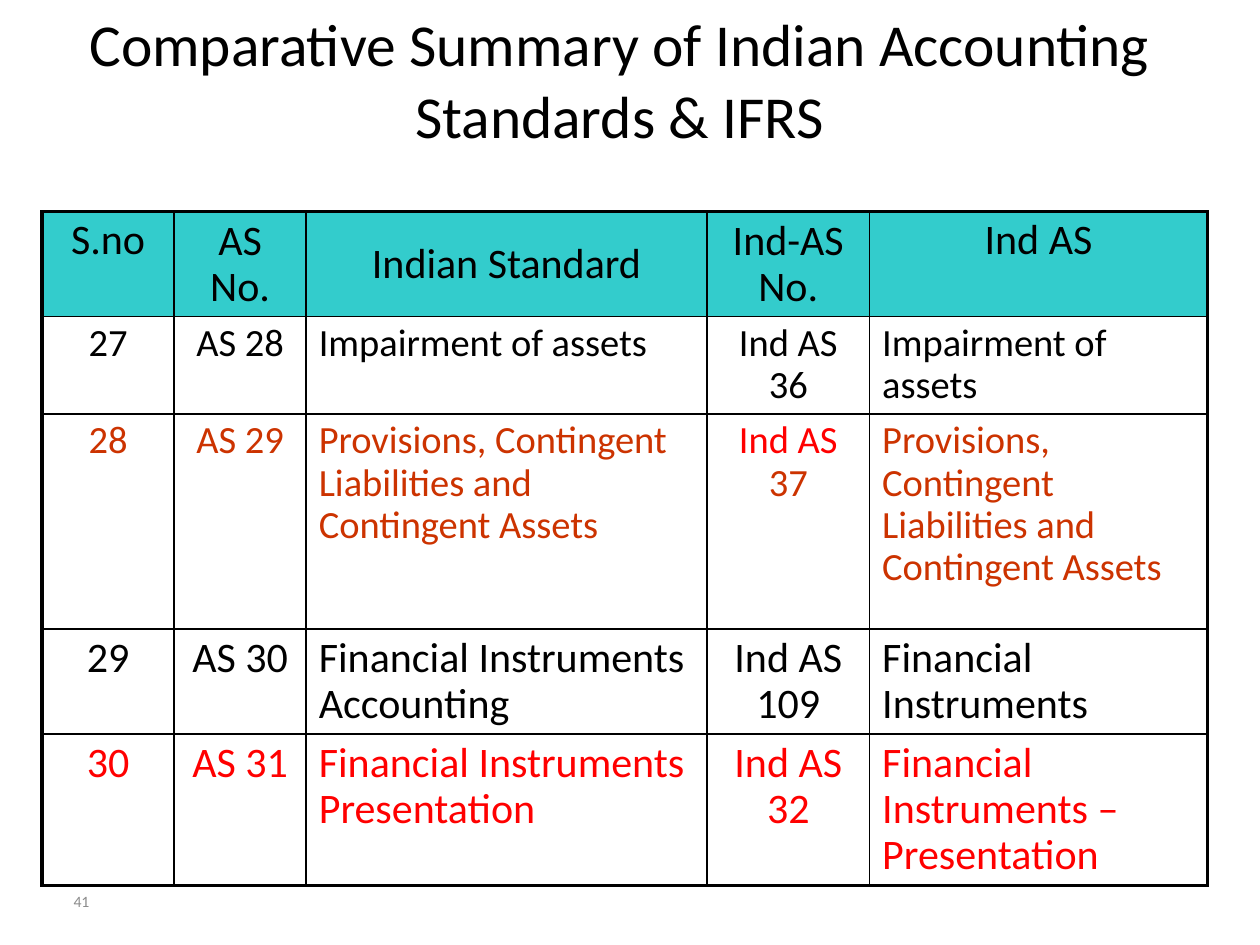
from dataclasses import dataclass

from lxml import etree
from pptx import Presentation
from pptx.dml.color import RGBColor
from pptx.enum import text
from pptx.oxml import ns
from pptx.util import Pt

BLACK, RED, RUST, TEAL, GREY = "000000", "FF0000", "CC3300", "33CCCC", "8C8C8C"
CENTER, LEFT = text.PP_ALIGN.CENTER, text.PP_ALIGN.LEFT
TOP, MIDDLE = text.MSO_ANCHOR.TOP, text.MSO_ANCHOR.MIDDLE
THIN, THICK = 1, 2.25


@dataclass
class Row:
    height: float
    texts: tuple[str, ...]
    size: float = 24
    color: str = BLACK


COLUMN_WIDTHS = (75.5, 75.5, 229, 93, 193)
COLUMN_ALIGNS = (CENTER, CENTER, LEFT, CENTER, LEFT)
HEADER_ANCHORS = (TOP, MIDDLE, MIDDLE, MIDDLE, TOP)
PROVISIONS = "Provisions, Contingent Liabilities and Contingent Assets"
ROWS = (
    Row(60, ("S.no", "AS No.", "Indian Standard", "Ind-AS No.", "Ind AS")),
    Row(55.5, ("27", "AS 28", "Impairment of assets", "Ind AS 36",
               "Impairment of assets"), size=22),
    Row(123, ("28", "AS 29", PROVISIONS, "Ind AS 37", PROVISIONS), size=22, color=RUST),
    Row(60, ("29", "AS 30", "Financial Instruments Accounting", "Ind AS 109",
             "Financial Instruments")),
    Row(86.5, ("30", "AS 31", "Financial Instruments Presentation", "Ind AS 32",
               "Financial Instruments – Presentation"), color=RED),
)


def rgb(color: str) -> RGBColor:
    return RGBColor.from_string(color)


def add_text(p, content: str, *, size: float, color: str = BLACK, align=LEFT, spacing: float = 1.0):
    """Append a formatted run to the paragraph."""
    p.alignment, p.line_spacing = align, spacing
    r = p.add_run()
    r.text = content
    r.font.name, r.font.size, r.font.bold = "Calibri", Pt(size), False
    r.font.color.rgb = rgb(color)


def set_borders(cell, **widths: float) -> None:
    """Draw black borders; keys are the sides L, R, T and B."""
    tc_pr = cell._tc.get_or_add_tcPr()
    for i, side in enumerate("LRTB"):
        ln = etree.Element(ns.qn(f"a:ln{side}"), w=str(Pt(widths[side])))
        fill = etree.SubElement(ln, ns.qn("a:solidFill"))
        etree.SubElement(fill, ns.qn("a:srgbClr"), val=BLACK)
        tc_pr.insert(i, ln)


def add_title(slide) -> None:
    title = slide.shapes.title
    title.left, title.top, title.width, title.height = Pt(18), Pt(0), Pt(672), Pt(90)
    tf = title.text_frame
    tf.auto_size, tf.vertical_anchor = text.MSO_AUTO_SIZE.NONE, MIDDLE
    add_text(tf.paragraphs[0], "Comparative Summary of Indian Accounting Standards & IFRS",
             size=34, align=CENTER)


def add_page_number(slide, number: str) -> None:
    tf = slide.shapes.add_textbox(Pt(36), Pt(500.5), Pt(168), Pt(29)).text_frame
    tf.word_wrap, tf.vertical_anchor = True, MIDDLE
    tf.margin_left = tf.margin_right = Pt(6)
    add_text(tf.paragraphs[0], number, size=9, color=GREY)


def add_standards_table(slide, rows: tuple[Row, ...]) -> None:
    last_row, last_col = len(rows) - 1, len(COLUMN_WIDTHS) - 1
    table = slide.shapes.add_table(
        len(rows), len(COLUMN_WIDTHS), Pt(24), Pt(121),
        Pt(sum(COLUMN_WIDTHS)), Pt(sum(row.height for row in rows))).table
    table.first_row = table.horz_banding = False
    for column, width in zip(table.columns, COLUMN_WIDTHS):
        column.width = Pt(width)
    for i, row in enumerate(rows):
        table.rows[i].height = Pt(row.height)
        for j, content in enumerate(row.texts):
            cell = table.cell(i, j)
            if i == 0:
                cell.fill.solid()
                cell.fill.fore_color.rgb = rgb(TEAL)
            else:
                cell.fill.background()
            cell.vertical_anchor = HEADER_ANCHORS[j] if i == 0 else TOP
            set_borders(cell, L=THICK if j == 0 else THIN, R=THICK if j == last_col else THIN,
                        T=THICK if i == 0 else THIN, B=THICK if i == last_row else THIN)
            p = cell.text_frame.paragraphs[0]
            style = dict(size=row.size, align=CENTER if i == 0 else COLUMN_ALIGNS[j], spacing=0.9)
            if row.color == RUST and content.startswith("Ind AS "):
                add_text(p, "Ind AS ", color=RED, **style)
                content = content.removeprefix("Ind AS ")
            add_text(p, content, color=row.color, **style)


def main() -> None:
    prs = Presentation()
    prs.slide_width, prs.slide_height = Pt(720), Pt(540)
    s = prs.slides.add_slide(prs.slide_layouts[5])
    add_page_number(s, "41")
    add_standards_table(s, ROWS)
    add_title(s)
    prs.save("out.pptx")


if __name__ == "__main__":
    main()
